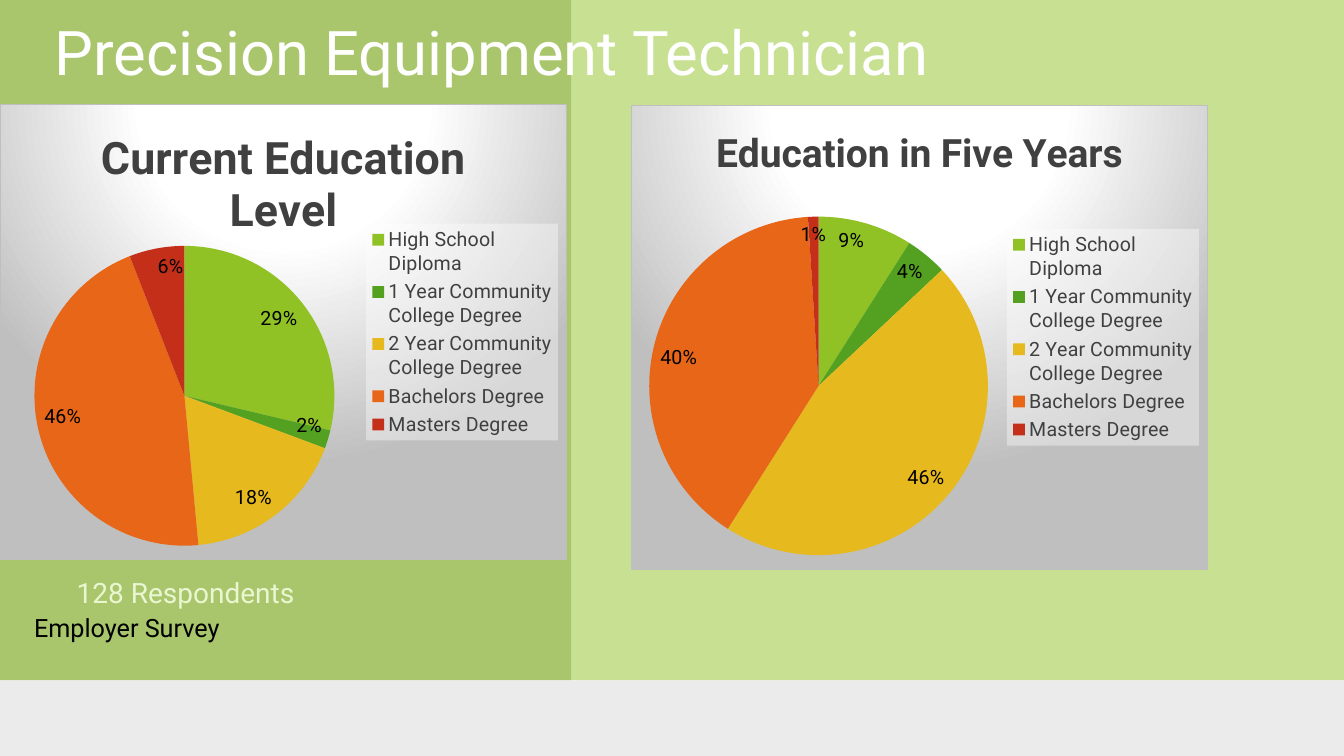
from lxml import etree
from pptx import Presentation
from pptx import util as u
from pptx.chart.data import CategoryChartData
from pptx.dml.color import RGBColor
from pptx.enum import chart as charts, shapes, text
from pptx.oxml import parse_xml
from pptx.oxml.ns import qn

COLORS = {
    "white": "FFFFFF", "black": "000000", "lime": "90C226", "olive": "6C921D",
    "footer": "EBEBEB", "pale": "EAF6D1", "grey": "BFBFBF", "ink": "404040",
}
SLICES = ["90C226", "54A021", "E6B91E", "E76618", "C42F1A"]
DEGREES = ["High School Diploma", "1 Year Community College Degree",
           "2 Year Community College Degree", "Bachelors Degree", "Masters Degree"]
NAMESPACES = ('xmlns:c="http://schemas.openxmlformats.org/drawingml/2006/chart" '
              'xmlns:a="http://schemas.openxmlformats.org/drawingml/2006/main"')


class SlideBuilder:
    def __init__(self, page, font_name):
        self.page = page
        self.font_name = font_name
        self.band_count = 0

    def style(self, font, size, color, bold=False):
        font.name = self.font_name
        font.size = u.Pt(size)
        font.bold = bold
        font.color.rgb = RGBColor.from_string(COLORS[color])

    def band(self, left, top, width, height, color, opacity=100):
        """Add a background rectangle beneath the placeholders."""
        box = self.page.shapes.add_shape(
            shapes.MSO_SHAPE.RECTANGLE, *map(u.Pt, (left, top, width, height)))
        box.shadow.inherit = False
        box.line.fill.background()
        box.fill.solid()
        box.fill.fore_color.rgb = RGBColor.from_string(COLORS[color])
        if opacity < 100:
            shade = box._element.spPr.find(qn("a:solidFill"))[0]
            etree.SubElement(shade, qn("a:alpha"), val=str(opacity * 1000))
        self.page.shapes._spTree.insert(2 + self.band_count, box._element)
        self.band_count += 1

    def fill_text(self, box, frame, words, size, color, spacing=1.0, top_inset=3.6):
        box.left, box.top, box.width, box.height = map(u.Pt, frame)
        body = box.text_frame
        body.text = words
        body.word_wrap = True
        body.auto_size = text.MSO_AUTO_SIZE.NONE
        body.vertical_anchor = text.MSO_ANCHOR.TOP
        body.margin_top = u.Pt(top_inset)
        para = body.paragraphs[0]
        para.alignment = text.PP_ALIGN.LEFT
        para.line_spacing = spacing
        para.space_before = u.Pt(0)
        self.style(para.runs[0].font, size, color)

    def label(self, frame, words, size, color):
        box = self.page.shapes.add_textbox(*map(u.Pt, frame))
        self.fill_text(box, frame, words, size, color)

    def pie(self, frame, title, title_size, values, plot_area):
        data = CategoryChartData()
        data.categories = DEGREES
        data.add_series("Series 1", values)
        chart = self.page.shapes.add_chart(
            charts.XL_CHART_TYPE.PIE, *map(u.Pt, frame), data).chart
        self.style(chart.font, 10, "black")

        chart.has_title = True
        chart.chart_title.text_frame.text = title
        span = chart.chart_title.text_frame.paragraphs[0].runs[0]
        self.style(span.font, title_size, "ink", bold=True)
        chart.chart_title.include_in_layout = False

        chart.has_legend = True
        chart.legend.position = charts.XL_LEGEND_POSITION.RIGHT
        chart.legend.include_in_layout = False
        self.style(chart.legend.font, 14, "ink")

        plot = chart.plots[0]
        plot.vary_by_categories = True
        series = plot.series[0]
        for index, color in enumerate(SLICES):
            fill = series.points[index].format.fill
            fill.solid()
            fill.fore_color.rgb = RGBColor.from_string(color)
        labels = series.data_labels
        labels.show_value = False
        labels.show_percentage = True
        labels.number_format = "0%"
        labels.number_format_is_linked = False
        labels.position = charts.XL_LABEL_POSITION.INSIDE_END
        self.style(labels.font, 14, "black")
        self.finish_chart(chart, plot_area)

    def finish_chart(self, chart, plot_area):
        """Set the gradient, border, legend backing and inner plot position."""
        root = chart._chartSpace
        stops = "".join(
            f'<a:gs pos="{place * 1000}"><a:srgbClr val="{COLORS[color]}"/></a:gs>'
            for place, color in ((0, "white"), (39, "white"), (100, "grey")))
        root.find(qn("c:chart")).addnext(parse_xml(
            f'<c:spPr {NAMESPACES}><a:gradFill><a:gsLst>{stops}</a:gsLst>'
            '<a:path path="circle"><a:fillToRect l="50000" t="-80000" r="50000" '
            'b="180000"/></a:path></a:gradFill><a:ln w="9525"><a:solidFill>'
            f'<a:srgbClr val="{COLORS["grey"]}"/></a:solidFill></a:ln></c:spPr>'))
        chart.legend._element.find(qn("c:txPr")).addprevious(parse_xml(
            f'<c:spPr {NAMESPACES}><a:solidFill><a:srgbClr val="{COLORS["white"]}">'
            '<a:alpha val="39000"/></a:srgbClr></a:solidFill></c:spPr>'))
        area = root.find(".//" + qn("c:plotArea"))
        for old in area.findall(qn("c:layout")):
            area.remove(old)
        sizes = "".join(f'<c:{key} val="{value}"/>'
                        for key, value in zip("xywh", plot_area))
        area.insert(0, parse_xml(
            f'<c:layout {NAMESPACES}><c:manualLayout><c:layoutTarget val="inner"/>'
            f'<c:xMode val="edge"/><c:yMode val="edge"/>{sizes}'
            '</c:manualLayout></c:layout>'))


def main():
    deck = Presentation()
    deck.slide_width, deck.slide_height = u.Pt(960), u.Pt(540)
    page = deck.slides.add_slide(deck.slide_layouts[0])
    builder = SlideBuilder(page, "Roboto")

    builder.band(0, 0, 960, 486, "lime", 50)
    builder.band(0, 0, 408, 486, "olive", 32)
    builder.band(0, 486, 960, 54, "footer")

    builder.fill_text(page.shapes.title, (31.7, 13, 673, 63.4),
                      "Precision Equipment Technician", 44, "white", 0.8, 7.2)
    builder.fill_text(page.placeholders[1], (47.5, 407.5, 331, 56),
                      "128 Respondents", 20, "pale")

    builder.pie((0, 74.2, 405, 326), "Current Education Level", 32,
                (29, 2, 18, 46, 6), (0.06, 0.31, 0.53, 0.66))
    builder.pie((450.7, 74.9, 412, 332), "Education in Five Years", 28,
                (9, 4, 46, 40, 1), (0.03, 0.24, 0.59, 0.73))

    builder.label((17.3, 434, 196, 29), "Employer Survey", 18, "black")
    deck.save("out.pptx")


if __name__ == "__main__":
    main()
